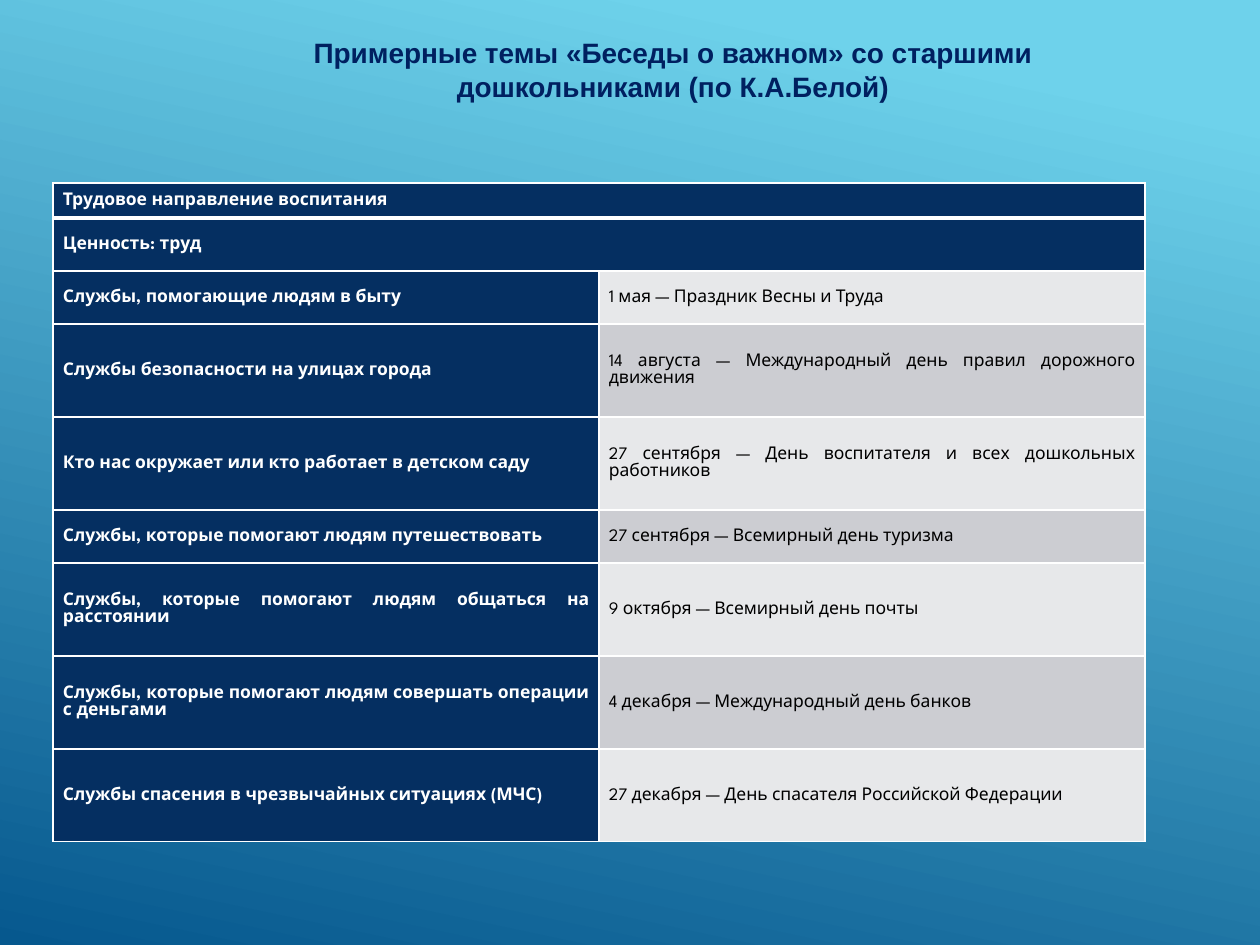
from lxml import etree
from pptx import Presentation
from pptx.dml.color import RGBColor
from pptx.enum.text import MSO_ANCHOR, MSO_AUTO_SIZE, PP_ALIGN
from pptx.oxml.ns import qn
from pptx.util import Pt

PX = 914400 / 126
NAVY, LIGHT, GREY, WHITE = "052F61", "E7E8EA", "CCCDD2", "FFFFFF"

TITLE = "Примерные темы «Беседы о важном» со старшими дошкольниками (по К.А.Белой)"
HEADINGS = ["Трудовое направление воспитания", "Ценность: труд"]
TOPICS = [
    ("Службы, помогающие людям в быту", "1 мая — Праздник Весны и Труда"),
    ("Службы безопасности на улицах города",
     "14 августа — Международный день правил дорожного движения"),
    ("Кто нас окружает или кто работает в детском саду",
     "27 сентября — День воспитателя и всех дошкольных работников"),
    ("Службы, которые помогают людям путешествовать",
     "27 сентября — Всемирный день туризма"),
    ("Службы, которые помогают людям общаться на расстоянии",
     "9 октября — Всемирный день почты"),
    ("Службы, которые помогают людям совершать операции с деньгами",
     "4 декабря — Международный день банков"),
    ("Службы спасения в чрезвычайных ситуациях (МЧС)",
     "27 декабря — День спасателя Российской Федерации"),
]
ROW_HEIGHTS = [35, 53, 53, 93, 93, 53, 93, 93, 93]


def px(n):
    return round(n * PX)


def rgb(color):
    return RGBColor.from_string(color)


def style_font(font, name, size, color, bold):
    font.name, font.size, font.bold = name, Pt(size), bold
    font.color.rgb = rgb(color)


def set_margins(box, left, top, right, bottom):
    box.margin_left, box.margin_top = px(left), px(top)
    box.margin_right, box.margin_bottom = px(right), px(bottom)


def add_background(s):
    fill = s.background.fill
    fill.gradient()
    fill.gradient_angle = 258
    for stop, (position, color) in zip(fill.gradient_stops, [(0.1, "6ED2EB"), (1, "06588E")]):
        stop.position = position
        stop.color.rgb = rgb(color)


def add_title(s, x, y, w, h):
    tf = s.shapes.add_textbox(px(x), px(y), px(w), px(h)).text_frame
    tf.word_wrap = True
    tf.auto_size = MSO_AUTO_SIZE.SHAPE_TO_FIT_TEXT
    set_margins(tf, 1, 4, 0, 0)
    p = tf.paragraphs[0]
    p.text = TITLE
    p.alignment = PP_ALIGN.CENTER
    p.space_before = Pt(2)
    style_font(p.runs[0].font, "Arial", 16, "002060", True)


def set_borders(cell, top=1, bottom=1):
    """Draw white borders; widths are in points."""
    tc_pr = cell._tc.get_or_add_tcPr()
    widths = {"a:lnL": 1, "a:lnR": 1, "a:lnT": top, "a:lnB": bottom}
    for i, (tag, width) in enumerate(widths.items()):
        ln = etree.Element(qn(tag), w=str(Pt(width)))
        solid = etree.SubElement(ln, qn("a:solidFill"))
        etree.SubElement(solid, qn("a:srgbClr"), val=WHITE)
        tc_pr.insert(i, ln)


def fill_cell(cell, text, fill, color, bold):
    cell.fill.solid()
    cell.fill.fore_color.rgb = rgb(fill)
    cell.vertical_anchor = MSO_ANCHOR.MIDDLE
    set_margins(cell, 10, 5, 10, 5)
    p = cell.text_frame.paragraphs[0]
    p.text = text
    p.alignment = PP_ALIGN.JUSTIFY
    p.line_spacing = 1.07
    p.space_after = Pt(8)
    style_font(p.runs[0].font, "League Spartan", 10, color, bold)


def add_topics_table(s, x, y, w):
    table = s.shapes.add_table(len(ROW_HEIGHTS), 2, px(x), px(y), px(w),
                               px(sum(ROW_HEIGHTS))).table
    for column in table.columns:
        column.width = px(w / 2)
    for row, height in zip(table.rows, ROW_HEIGHTS):
        row.height = px(height)

    for i, heading in enumerate(HEADINGS):
        table.cell(i, 0).merge(table.cell(i, 1))
        fill_cell(table.cell(i, 0), heading, NAVY, WHITE, True)
    for i, (topic, date) in enumerate(TOPICS, len(HEADINGS)):
        fill_cell(table.cell(i, 0), topic, NAVY, WHITE, True)
        fill_cell(table.cell(i, 1), date, GREY if i % 2 else LIGHT, "000000", False)

    for i, row in enumerate(table.rows):
        for cell in row.cells:
            set_borders(cell, top=3 if i == 1 else 1, bottom=3 if i == 0 else 1)


def main():
    prs = Presentation()
    prs.slide_width, prs.slide_height = px(1260), px(945)
    s = prs.slides.add_slide(prs.slide_layouts[6])
    add_background(s)
    add_title(s, 231, 32, 883, 72)
    add_topics_table(s, 53, 183, 1092)
    prs.save("out.pptx")


if __name__ == "__main__":
    main()
